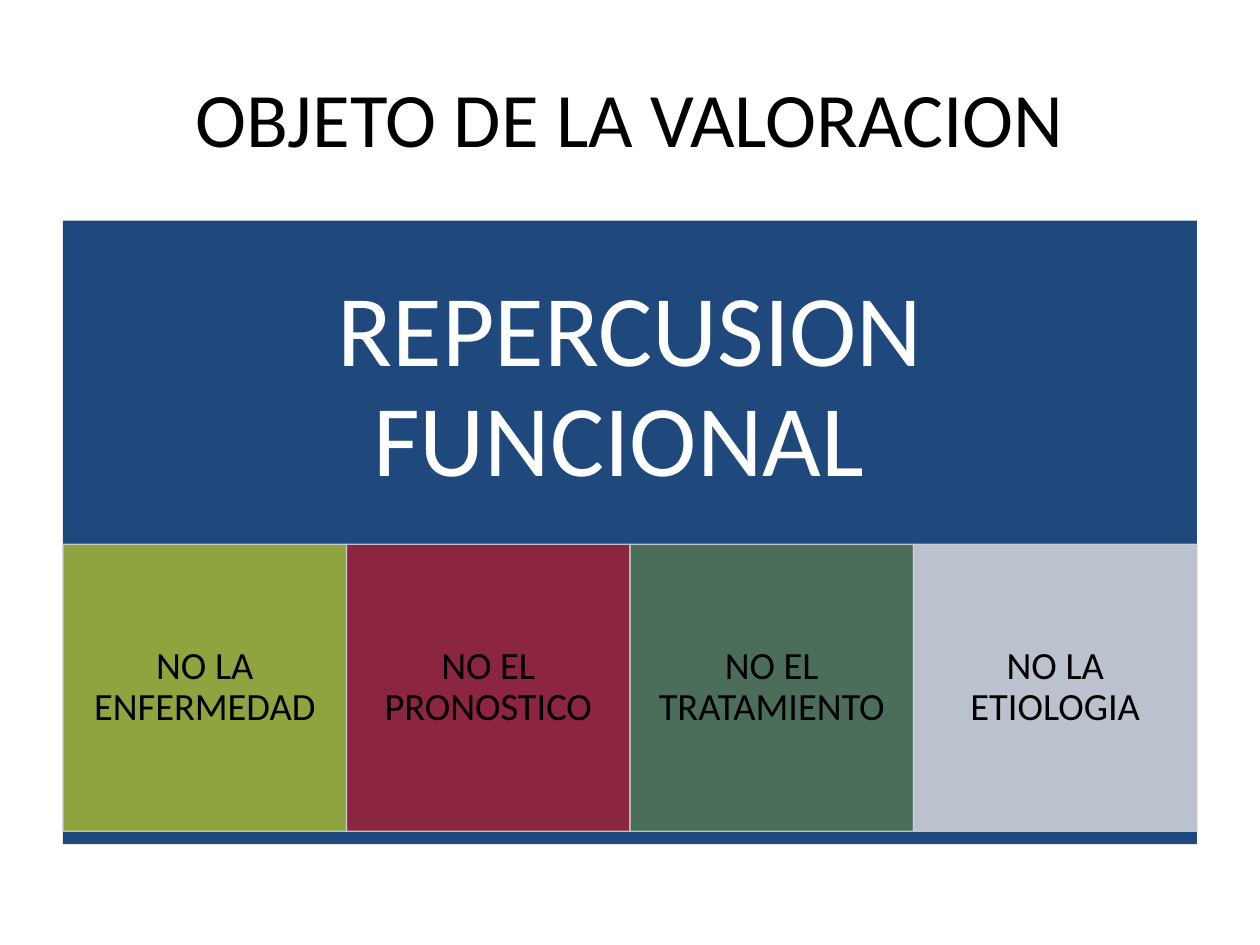
"""Build the slide on the object of the functional assessment."""
from lxml.etree import SubElement
from pptx import Presentation
from pptx.dml.color import RGBColor
from pptx.enum.shapes import MSO_SHAPE
from pptx.enum.text import MSO_ANCHOR, PP_ALIGN
from pptx.oxml.ns import qn
from pptx.util import Pt

BLACK = RGBColor(0x00, 0x00, 0x00)
WHITE = RGBColor(0xFF, 0xFF, 0xFF)
NAVY = RGBColor(0x1F, 0x49, 0x7D)
YELLOW = RGBColor(0xFF, 0xFF, 0x00)
RED = RGBColor(0xFF, 0x00, 0x00)
GREEN = RGBColor(0x77, 0x93, 0x3C)
GREY = RGBColor(0xCD, 0xD0, 0xD7)

LEFT, WIDTH = 36, 648
TILE_TOP, TILE_HEIGHT = 311, 164


def write(shape, text, size, color, margins, spacing):
    frame = shape.text_frame
    frame.word_wrap = True
    frame.vertical_anchor = MSO_ANCHOR.MIDDLE
    frame.margin_left = frame.margin_right = Pt(margins[0])
    frame.margin_top = frame.margin_bottom = Pt(margins[1])
    paragraph = frame.paragraphs[0]
    paragraph.text = text
    paragraph.alignment = PP_ALIGN.CENTER
    paragraph.line_spacing = spacing
    paragraph.font.name = "Calibri"
    paragraph.font.size = Pt(size)
    paragraph.font.color.rgb = color


def set_opacity(fill_parent, percent):
    color = fill_parent.find(qn("a:solidFill"))[0]
    SubElement(color, qn("a:alpha"), val=str(percent * 1000))


presentation = Presentation()
presentation.slide_width = Pt(720)
presentation.slide_height = Pt(540)
slide = presentation.slides.add_slide(presentation.slide_layouts[6])
shapes = slide.shapes

title = shapes.add_textbox(Pt(LEFT), Pt(21.6), Pt(WIDTH), Pt(90))
write(title, "OBJETO DE LA VALORACION", 44, BLACK, (7.2, 3.6), 1.0)

panel = shapes.add_shape(MSO_SHAPE.RECTANGLE, Pt(LEFT), Pt(126), Pt(WIDTH), Pt(356.4))
panel.shadow.inherit = False
panel.fill.solid()
panel.fill.fore_color.rgb = NAVY
panel.line.fill.background()

heading = shapes.add_textbox(Pt(LEFT), Pt(126), Pt(WIDTH), Pt(192.4))
write(heading, "REPERCUSION FUNCIONAL ", 58, WHITE, (32.4, 32.4), 0.9)

tiles = [
    ("NO LA ENFERMEDAD", YELLOW, 50),
    ("NO EL PRONOSTICO", RED, 49),
    ("NO EL TRATAMIENTO", GREEN, 51),
    ("NO LA ETIOLOGIA", GREY, 90),
]
tile_width = WIDTH / len(tiles)
for index, (text, color, opacity) in enumerate(tiles):
    tile = shapes.add_shape(
        MSO_SHAPE.RECTANGLE,
        Pt(LEFT + index * tile_width), Pt(TILE_TOP), Pt(tile_width), Pt(TILE_HEIGHT),
    )
    tile.shadow.inherit = False
    tile.fill.solid()
    tile.fill.fore_color.rgb = color
    tile.line.color.rgb = GREY
    tile.line.width = Pt(0.75)
    properties = tile.element.spPr
    set_opacity(properties, opacity)
    set_opacity(properties.find(qn("a:ln")), 90)
    write(tile, text, 22, BLACK, (12.3, 2.2), 0.9)

presentation.save("out.pptx")
